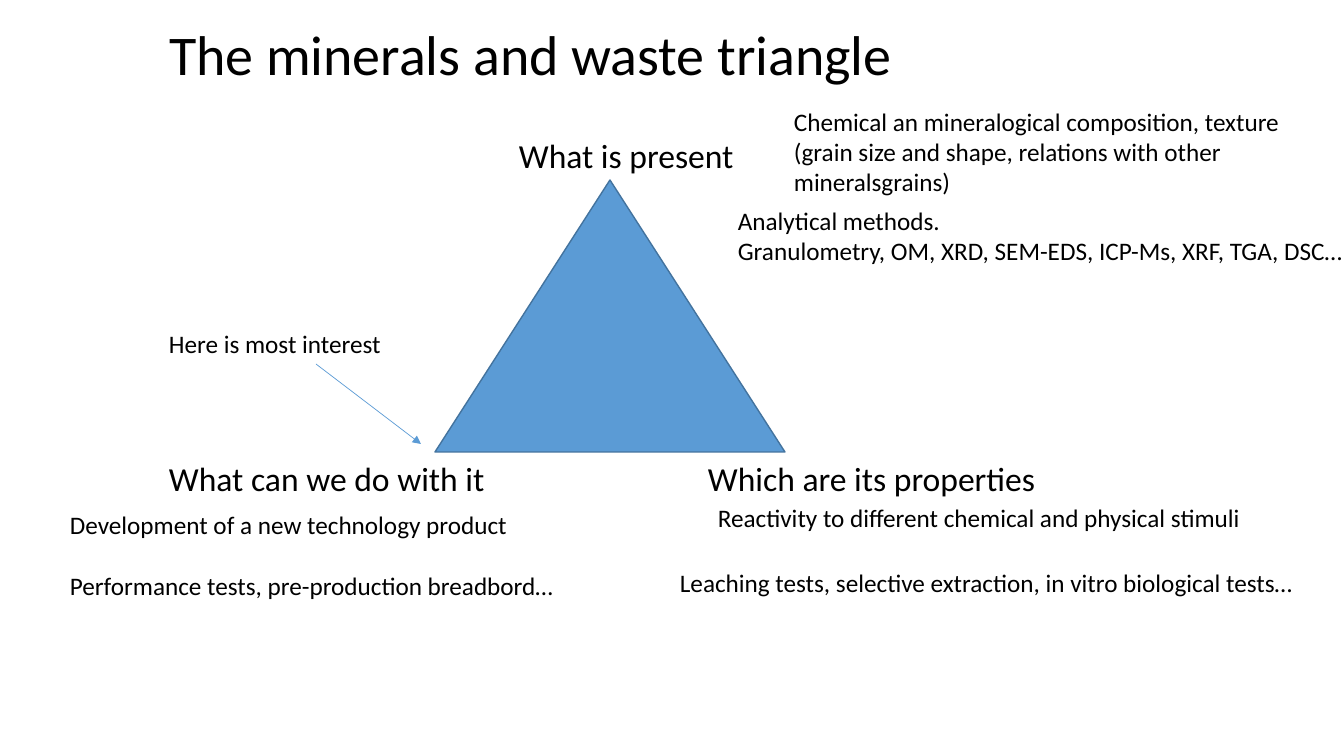
from pptx import Presentation
from pptx import util as u
from pptx.dml.color import RGBColor
from pptx.enum import shapes, text
from pptx.oxml.ns import qn
from lxml import etree

COLORS = {"ink": "000000", "fill": "5B9BD5", "edge": "43739E"}
SCALE = 914400 / 100.8  # EMU in one px


def px(n):
    return u.Emu(round(n * SCALE))


def color(name):
    return RGBColor.from_string(COLORS[name])


class Board:
    font = "Calibri"

    def __init__(self, deck):
        self.slide = deck.slides.add_slide(deck.slide_layouts[5])
        self.shapes = self.slide.shapes

    def set_text(self, frame, lines, size, wrap=False, gap=0):
        frame.word_wrap = wrap
        frame.auto_size = text.MSO_AUTO_SIZE.SHAPE_TO_FIT_TEXT
        frame.vertical_anchor = text.MSO_ANCHOR.TOP
        frame.text = "\n".join(lines)
        for i, para in enumerate(frame.paragraphs):
            para.alignment = text.PP_ALIGN.LEFT
            para.space_before = u.Pt(gap if i else 0)
            para.font.name = self.font
            para.font.size = u.Pt(size)
            para.font.color.rgb = color("ink")

    def title(self, box, words):
        head = self.shapes.title
        head.left, head.top, head.width, head.height = map(px, box)
        self.set_text(head.text_frame, [words], 40)

    def label(self, box, *lines, size=18, wrap=False, gap=0):
        area = self.shapes.add_textbox(*map(px, box))
        self.set_text(area.text_frame, lines, size, wrap, gap)

    def triangle(self, box):
        tri = self.shapes.add_shape(
            shapes.MSO_SHAPE.ISOSCELES_TRIANGLE, *map(px, box))
        tri.shadow.inherit = False
        tri.fill.solid()
        tri.fill.fore_color.rgb = color("fill")
        tri.line.color.rgb = color("edge")
        tri.line.width = u.Pt(1)

    def arrow(self, *ends):
        arrow = self.shapes.add_connector(
            shapes.MSO_CONNECTOR.STRAIGHT, *map(px, ends))
        arrow.line.color.rgb = color("fill")
        arrow.line.width = u.Pt(0.5)
        props = arrow._element.spPr
        etree.SubElement(props.find(qn("a:ln")), qn("a:tailEnd"),
                         type="triangle")
        etree.SubElement(props, qn("a:effectLst"))


def main():
    deck = Presentation()
    deck.slide_width, deck.slide_height = px(1344), px(756)
    board = Board(deck)

    # Title and triangle
    board.title((159, 14, 750, 78), "The minerals and waste triangle")
    board.triangle((435, 180, 350, 272))

    # Corner headings
    board.label((509, 130, 237, 50), "What is present", size=24)
    board.label((698, 453, 351, 50), "Which are its properties", size=24)
    board.label((159, 453, 339, 50), "What can we do with it", size=24)

    # Top corner: composition and methods
    board.label((784, 101, 544, 102),
                "Chemical an mineralogical composition, texture (grain size "
                "and shape, relations with other mineralsgrains)", wrap=True)
    board.label((728, 200, 626, 72), "Analytical methods.",
                "Granulometry, OM, XRD, SEM-EDS, ICP-Ms, XRF, TGA, DSC…")

    # Right corner: properties
    board.label((708, 497, 555, 40),
                "Reactivity to different chemical and physical stimuli")
    board.label((670, 562, 648, 40),
                "Leaching tests, selective extraction, "
                "in vitro biological tests…")

    # Left corner: use
    board.label((60, 504, 509, 102), "Development of a new technology product",
                "Performance tests, pre-production breadbord…", gap=22)
    board.label((159, 323, 235, 40), "Here is most interest")
    board.arrow(316, 364, 421, 444)

    deck.save("out.pptx")


if __name__ == "__main__":
    main()
